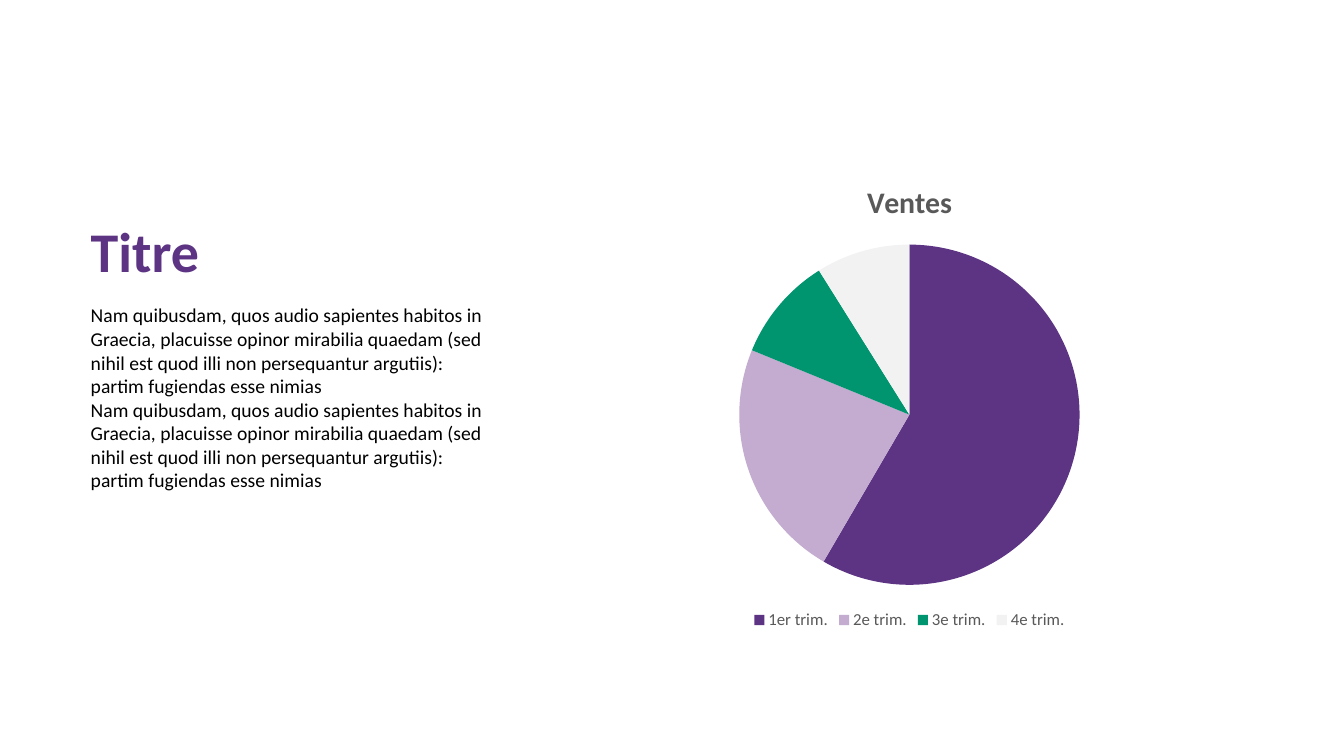
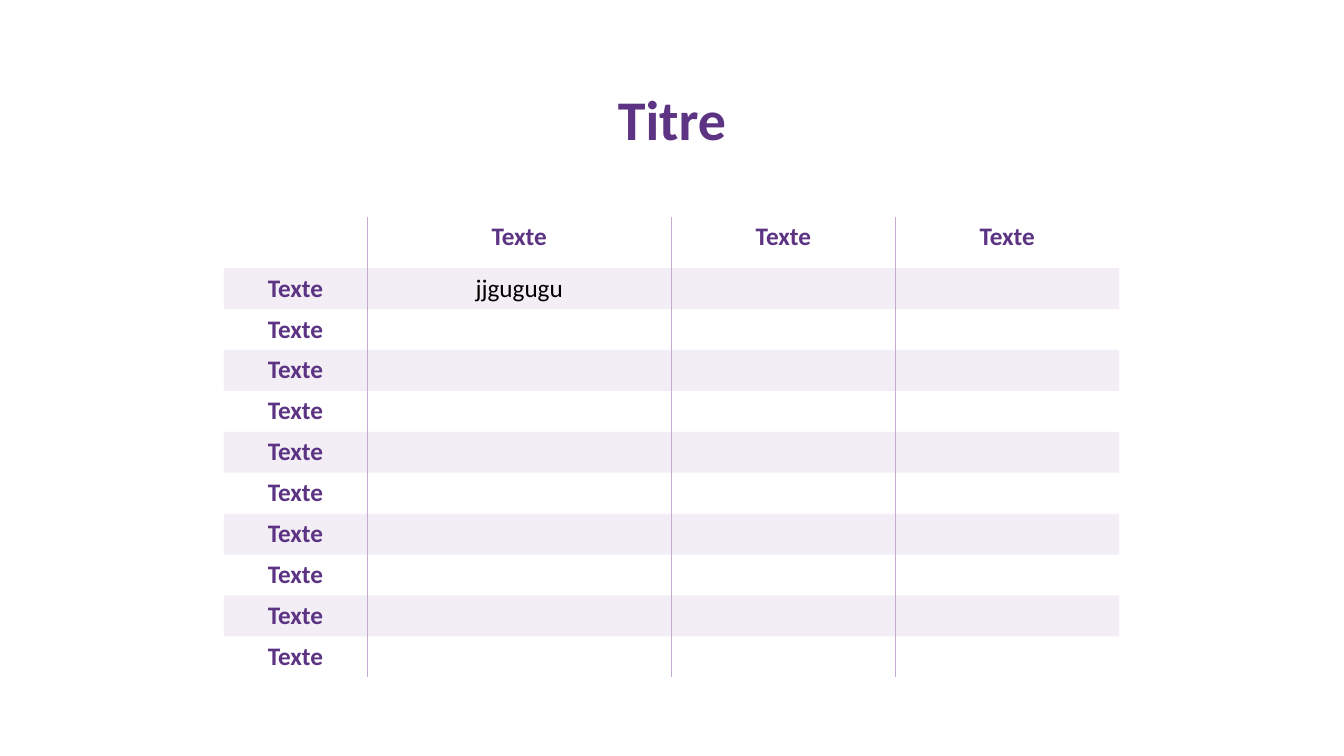
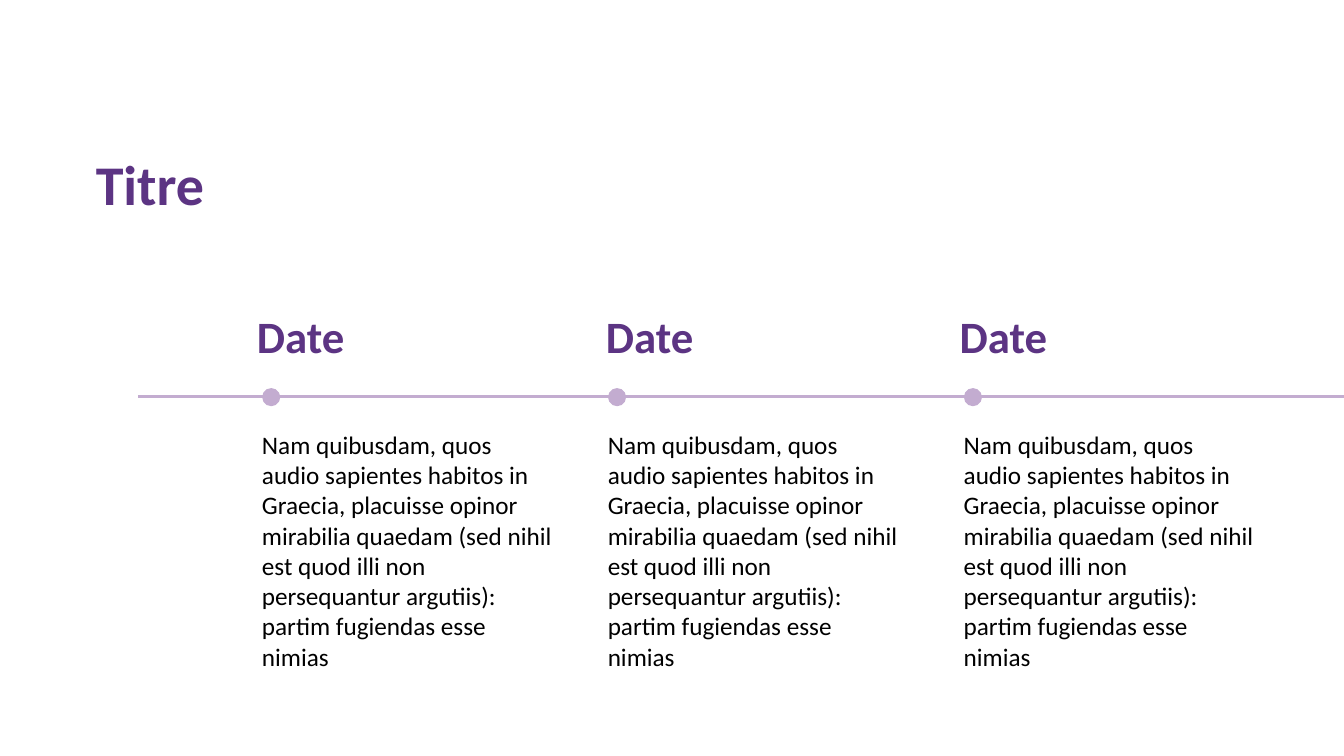
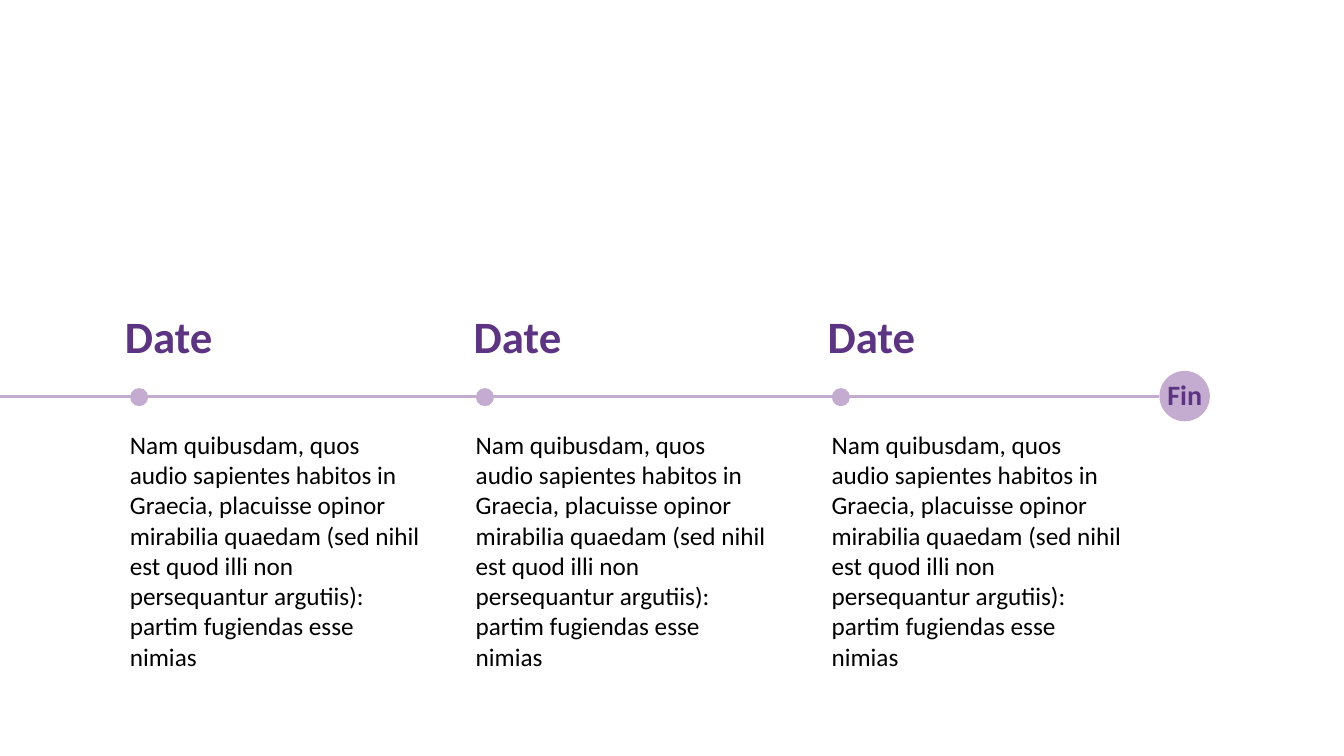
from dataclasses import dataclass

from lxml import etree
from pptx import Presentation
from pptx import util as u
from pptx.chart.data import CategoryChartData
from pptx.dml.color import RGBColor
from pptx.enum import chart as ch, shapes, text
from pptx.oxml import parse_xml
from pptx.oxml.ns import nsdecls, qn


@dataclass(frozen=True)
class Style:
    size: float
    color: str
    bold: bool = False


class Theme:
    font = "Calibri"
    purple, lilac, green, pale = "5C3483", "C3ACD0", "00946F", "F2F2F2"
    black, grey = "000000", "595959"
    title = Style(40, purple, True)
    date = Style(32, purple, True)
    end = Style(20, purple, True)
    body = Style(18, black)
    small = Style(14, black)
    heading = Style(18, purple, True)
    chart_title = Style(21.3, grey, True)
    legend = Style(12, grey)
    rule, timeline = 0.25, 2.25


# Content; lengths are in px, 100 to the inch
PX = u.Inches(1) // 100
SLIDE_SIZE = (1333, 750)
TITLE = "Titre"
LOREM = ("Nam quibusdam, quos audio sapientes habitos in Graecia, placuisse opinor "
         "mirabilia quaedam (sed nihil est quod illi non persequantur argutiis): "
         "partim fugiendas esse nimias")

SALES_NAME = "Ventes"
SALES = [("1er trim.", 59, Theme.purple), ("2e trim.", 23, Theme.lilac),
         ("3e trim.", 10, Theme.green), ("4e trim.", 9, Theme.pale)]

HEADERS = ["", "Texte", "Texte", "Texte"]
ROWS = [["Texte", "jjgugugu", "", ""]] + [["Texte", "", "", ""]] * 9
COLUMN_WIDTHS = [142, 302, 222, 222]
HEADER_HEIGHT, ROWS_HEIGHT = 51, 406

# Dot position, shift of the date from the dot, date, description
STOPS = [(260, -15, "Date", LOREM), (603, -12, "Date", LOREM), (956, -14, "Date", LOREM)]
AXIS_Y, AXIS_LENGTH, DOT = 393, 1210, 18
END_LABEL, END_SIZE = "Fin", 50

LEFT, CENTER = text.PP_ALIGN.LEFT, text.PP_ALIGN.CENTER


def px(*lengths):
    return [u.Emu(length * PX) for length in lengths]


def rgb(color):
    return RGBColor.from_string(color)


def apply_font(font, style):
    font.name, font.size, font.bold = Theme.font, u.Pt(style.size), style.bold
    font.color.rgb = rgb(style.color)


def write(frame, paragraphs, style, align=LEFT):
    for number, words in enumerate(paragraphs):
        paragraph = frame.paragraphs[0] if number == 0 else frame.add_paragraph()
        paragraph.alignment = align
        run = paragraph.add_run()
        run.text = words
        apply_font(run.font, style)


def set_frame(frame):
    frame.word_wrap = True
    frame.auto_size = text.MSO_AUTO_SIZE.NONE
    frame.vertical_anchor = text.MSO_ANCHOR.TOP


def fill_placeholder(holder, box, paragraphs, style, align=LEFT):
    holder.left, holder.top, holder.width, holder.height = px(*box)
    set_frame(holder.text_frame)
    write(holder.text_frame, paragraphs, style, align)


def add_title(slide, left, top, align=LEFT):
    fill_placeholder(slide.shapes.title, (left, top, 423, 77), [TITLE], Theme.title, align)


def add_text(slide, box, words, style):
    frame = slide.shapes.add_textbox(*px(*box)).text_frame
    set_frame(frame)
    write(frame, [words], style)


def add_circle(slide, left, top, size):
    circle = slide.shapes.add_shape(shapes.MSO_SHAPE.OVAL, *px(left, top, size, size))
    circle.shadow.inherit = False
    circle.fill.solid()
    circle.fill.fore_color.rgb = rgb(Theme.lilac)
    circle.line.fill.background()


def add_body(slide):
    body = slide.placeholders[1]
    fill_placeholder(body, (80, 296, 423, 222), [LOREM, LOREM], Theme.small)
    for paragraph in body.text_frame.paragraphs:
        properties = paragraph._p.get_or_add_pPr()
        properties.set("marL", "0")
        properties.set("indent", "0")
        etree.SubElement(properties, qn("a:buNone"))
        paragraph.space_before = u.Pt(0)


def add_pie(slide):
    data = CategoryChartData()
    data.categories = [quarter for quarter, _, _ in SALES]
    data.add_series(SALES_NAME, [value for _, value, _ in SALES])
    pie = slide.shapes.add_chart(ch.XL_CHART_TYPE.PIE, *px(550, 160, 704, 469), data).chart
    pie.font.name, pie.font.size = Theme.font, u.Pt(10)
    pie.has_title = True
    write(pie.chart_title.text_frame, [SALES_NAME], Theme.chart_title, CENTER)
    pie.chart_title.include_in_layout = False
    pie.has_legend = True
    pie.legend.position = ch.XL_LEGEND_POSITION.BOTTOM
    pie.legend.include_in_layout = False
    apply_font(pie.legend.font, Theme.legend)
    plot = pie.plots[0]
    plot.vary_by_categories = True
    for number, (_, _, color) in enumerate(SALES):
        fill = plot.series[0].points[number].format.fill
        fill.solid()
        fill.fore_color.rgb = rgb(color)


def add_border(cell, side):
    cell._tc.get_or_add_tcPr().append(parse_xml(
        f'<a:{side} {nsdecls("a")} w="{u.Pt(Theme.rule)}"><a:solidFill>'
        f'<a:srgbClr val="{Theme.lilac}"/></a:solidFill></a:{side}>'))


def shade(cell):
    """Fill a cell with lilac at 20 % opacity."""
    cell.fill.solid()
    cell.fill.fore_color.rgb = rgb(Theme.lilac)
    color = cell._tc.tcPr.find(".//" + qn("a:solidFill") + "[last()]/" + qn("a:srgbClr"))
    for color in cell._tc.tcPr.findall(qn("a:solidFill") + "/" + qn("a:srgbClr")):
        etree.SubElement(color, qn("a:alpha"), val="20000")


def add_grid(slide):
    lines = [HEADERS] + ROWS
    box = px(222, 215, sum(COLUMN_WIDTHS), HEADER_HEIGHT + ROWS_HEIGHT)
    table = slide.shapes.add_table(len(lines), len(HEADERS), *box).table
    table.first_row = table.horz_banding = False
    # "No style, no grid"
    table._tbl.tblPr.find(qn("a:tableStyleId")).text = "{2D5ABB26-0587-4C30-8999-92F81FD0307C}"
    for column, width in zip(table.columns, px(*COLUMN_WIDTHS)):
        column.width = width
    for r, line in enumerate(lines):
        table.rows[r].height = u.Emu((ROWS_HEIGHT * PX // len(ROWS)) if r else HEADER_HEIGHT * PX)
        for c, words in enumerate(line):
            cell = table.cell(r, c)
            if c > 0:
                add_border(cell, "lnL")
            if c < len(line) - 1:
                add_border(cell, "lnR")
            if r % 2:
                shade(cell)
            else:
                cell.fill.background()
            if words:
                style = Theme.heading if r == 0 or c == 0 else Theme.body
                write(cell.text_frame, [words], style, CENTER)


def add_timeline(slide, start, shift=0):
    axis = slide.shapes.add_connector(
        shapes.MSO_CONNECTOR.STRAIGHT, *px(start, AXIS_Y, start + AXIS_LENGTH, AXIS_Y))
    axis.line.color.rgb = rgb(Theme.lilac)
    axis.line.width = u.Pt(Theme.timeline)
    etree.SubElement(axis._element.spPr, qn("a:effectLst"))
    for dot, date_shift, date, description in STOPS:
        left = dot + shift
        add_circle(slide, left, AXIS_Y - DOT // 2 + 1, DOT)
        add_text(slide, (left + date_shift, 301, 122, 64), date, Theme.date)
        add_text(slide, (left - 10, 421, 307, 252), description, Theme.body)


def add_end(slide, left):
    add_circle(slide, left, AXIS_Y - END_SIZE // 2, END_SIZE)
    add_text(slide, (left - 2, 370, 61, 44), END_LABEL, Theme.end)


def main():
    deck = Presentation()
    deck.slide_width, deck.slide_height = px(*SLIDE_SIZE)
    title_and_body, title_only, blank = (deck.slide_layouts[i] for i in (1, 5, 6))

    sales = deck.slides.add_slide(title_and_body)
    add_title(sales, 80, 210)
    add_body(sales)
    add_pie(sales)

    grid = deck.slides.add_slide(title_only)
    add_title(grid, 455, 79, CENTER)
    add_grid(grid)

    opening = deck.slides.add_slide(title_only)
    add_title(opening, 85, 143)
    add_timeline(opening, 137)

    closing = deck.slides.add_slide(blank)
    axis_start = -60
    add_timeline(closing, axis_start, shift=-131)
    add_end(closing, axis_start + AXIS_LENGTH)

    deck.save("out.pptx")


if __name__ == "__main__":
    main()
